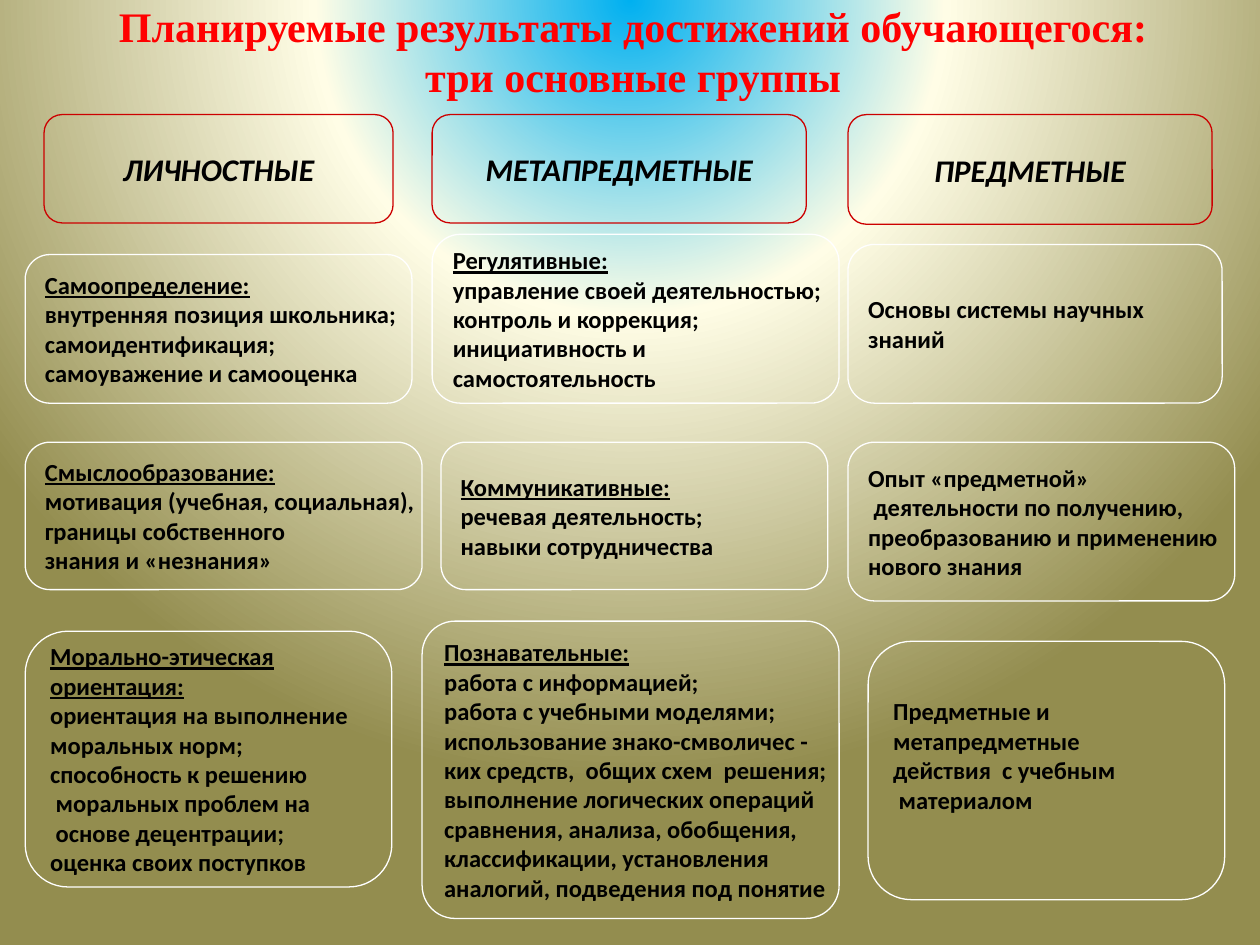
import dataclasses

import pptx
import pptx.dml.color
import pptx.enum.shapes
import pptx.enum.text
import pptx.oxml
import pptx.util

Inches = pptx.util.Inches
Pt = pptx.util.Pt
Align = pptx.enum.text.PP_ALIGN


@dataclasses.dataclass(frozen=True)
class Theme:
    title_font: str = "Times New Roman"
    body_font: str = "Calibri"
    title_color: str = "FF0000"
    text_color: str = "000000"
    header_line: str = "CC0000"
    card_line: str = "FFFFFF"
    title_size: float = 24
    title_spacing: float = 28.5
    header_size: float = 18
    card_size: float = 14
    line_width: float = 0.75
    background: tuple = ((0, "00B0F0"), (40, "FFFDE6"), (100, "938D4F"))


THEME = Theme()

TITLE = ("Планируемые результаты достижений обучающегося:",
         "три основные группы")

HEADERS = (
    ("ЛИЧНОСТНЫЕ", (0.35, 0.91, 2.77, 0.86)),
    ("МЕТАПРЕДМЕТНЫЕ", (3.43, 0.91, 2.97, 0.86)),
    ("ПРЕДМЕТНЫЕ", (6.73, 0.91, 2.89, 0.87)),
)

CARDS = (
    ((0.2, 2.02, 3.07, 1.18), ("Самоопределение:",),
     ("внутренняя позиция школьника;", "самоидентификация;",
      "самоуважение и самооценка"), {}),
    ((0.2, 3.51, 3.15, 1.17), ("Смыслообразование:",),
     ("мотивация (учебная, социальная),", "границы собственного",
      "знания и «незнания»"), {}),
    ((0.2, 5.01, 2.91, 2.03), ("Морально-этическая", "ориентация:"),
     ("ориентация на выполнение", "моральных норм;",
      "способность к решению", " моральных проблем на",
      " основе децентрации;", "оценка своих поступков"), {}),
    ((3.43, 1.86, 3.23, 1.34), ("Регулятивные:",),
     ("управление своей деятельностью;", "контроль и коррекция;",
      "инициативность и", "самостоятельность"), {}),
    ((3.5, 3.51, 3.07, 1.17), ("Коммуникативные:",),
     ("речевая деятельность;", "навыки сотрудничества"), {}),
    ((3.35, 4.93, 3.31, 2.36), ("Познавательные:",),
     ("работа с информацией;", "работа с учебными моделями;",
      "использование знако-смволичес -",
      "ких средств,  общих схем  решения;",
      "выполнение логических операций", "сравнения, анализа, обобщения,",
      "классификации, установления",
      "аналогий, подведения под понятие"), {"corner": 0.111}),
    ((6.73, 1.94, 2.97, 1.26), (),
     ("Основы системы научных", "знаний"), {}),
    ((6.73, 3.51, 3.07, 1.26), (),
     ("Опыт «предметной»", " деятельности по получению,",
      "преобразованию и применению", "нового знания"), {}),
    ((6.89, 5.09, 2.83, 2.05), (),
     ("Предметные и", "метапредметные", "действия  с учебным",
      " материалом"), {"bottom": 0.29}),
)


def rgb(value):
    return pptx.dml.color.RGBColor.from_string(value)


def set_background(page):
    stops = "".join(
        f'<a:gs pos="{place * 1000}"><a:srgbClr val="{color}"/></a:gs>'
        for place, color in THEME.background)
    page.element.cSld.insert(0, pptx.oxml.parse_xml(
        '<p:bg xmlns:p="http://schemas.openxmlformats.org/presentationml/2006/main"'
        ' xmlns:a="http://schemas.openxmlformats.org/drawingml/2006/main">'
        f'<p:bgPr><a:gradFill rotWithShape="1"><a:gsLst>{stops}</a:gsLst>'
        '<a:path path="circle">'
        '<a:fillToRect l="50000" t="-80000" r="50000" b="180000"/></a:path>'
        '</a:gradFill><a:effectLst/></p:bgPr></p:bg>'))


def add_line(frame, text, *, size, color=THEME.text_color, font=THEME.body_font,
             align=Align.LEFT, italic=False, underline=False, spacing=None):
    para = frame.paragraphs[0]
    if para.runs:
        para = frame.add_paragraph()
    para.alignment = align
    para.line_spacing = spacing
    span = para.add_run()
    span.text = text
    span.font.name = font
    span.font.size = Pt(size)
    span.font.bold = True
    span.font.italic = italic
    span.font.underline = underline
    span.font.color.rgb = rgb(color)


def set_title(page):
    title = page.shapes.title
    title.left, title.top = Inches(0.51), Inches(0)
    title.width, title.height = Inches(9.03), Inches(0.81)
    frame = title.text_frame
    frame.auto_size = pptx.enum.text.MSO_AUTO_SIZE.NONE
    frame.vertical_anchor = pptx.enum.text.MSO_ANCHOR.MIDDLE
    for text in TITLE:
        add_line(frame, text, size=THEME.title_size, color=THEME.title_color,
                 font=THEME.title_font, align=Align.CENTER,
                 spacing=Pt(THEME.title_spacing))


def add_box(page, place, line_color, corner=0.167, bottom=0.05):
    box = page.shapes.add_shape(
        pptx.enum.shapes.MSO_SHAPE.ROUNDED_RECTANGLE, *map(Inches, place))
    box.adjustments[0] = corner
    box.shadow.inherit = False
    box.fill.background()
    box.line.color.rgb = rgb(line_color)
    box.line.width = Pt(THEME.line_width)
    frame = box.text_frame
    frame.word_wrap = False
    frame.vertical_anchor = pptx.enum.text.MSO_ANCHOR.MIDDLE
    frame.margin_bottom = Inches(bottom)
    return frame


def add_header(page, text, place):
    frame = add_box(page, place, THEME.header_line)
    add_line(frame, text, size=THEME.header_size, align=Align.CENTER, italic=True)


def add_card(page, place, heading, lines, options):
    frame = add_box(page, place, THEME.card_line, **options)
    for text in heading:
        add_line(frame, text, size=THEME.card_size, underline=True)
    for text in lines:
        add_line(frame, text, size=THEME.card_size)


def main():
    deck = pptx.Presentation()
    deck.slide_width, deck.slide_height = Inches(10), Inches(7.5)
    page = deck.slides.add_slide(deck.slide_layouts[5])
    set_background(page)
    set_title(page)
    for header in HEADERS:
        add_header(page, *header)
    for card in CARDS:
        add_card(page, *card)
    deck.save("out.pptx")


if __name__ == "__main__":
    main()
